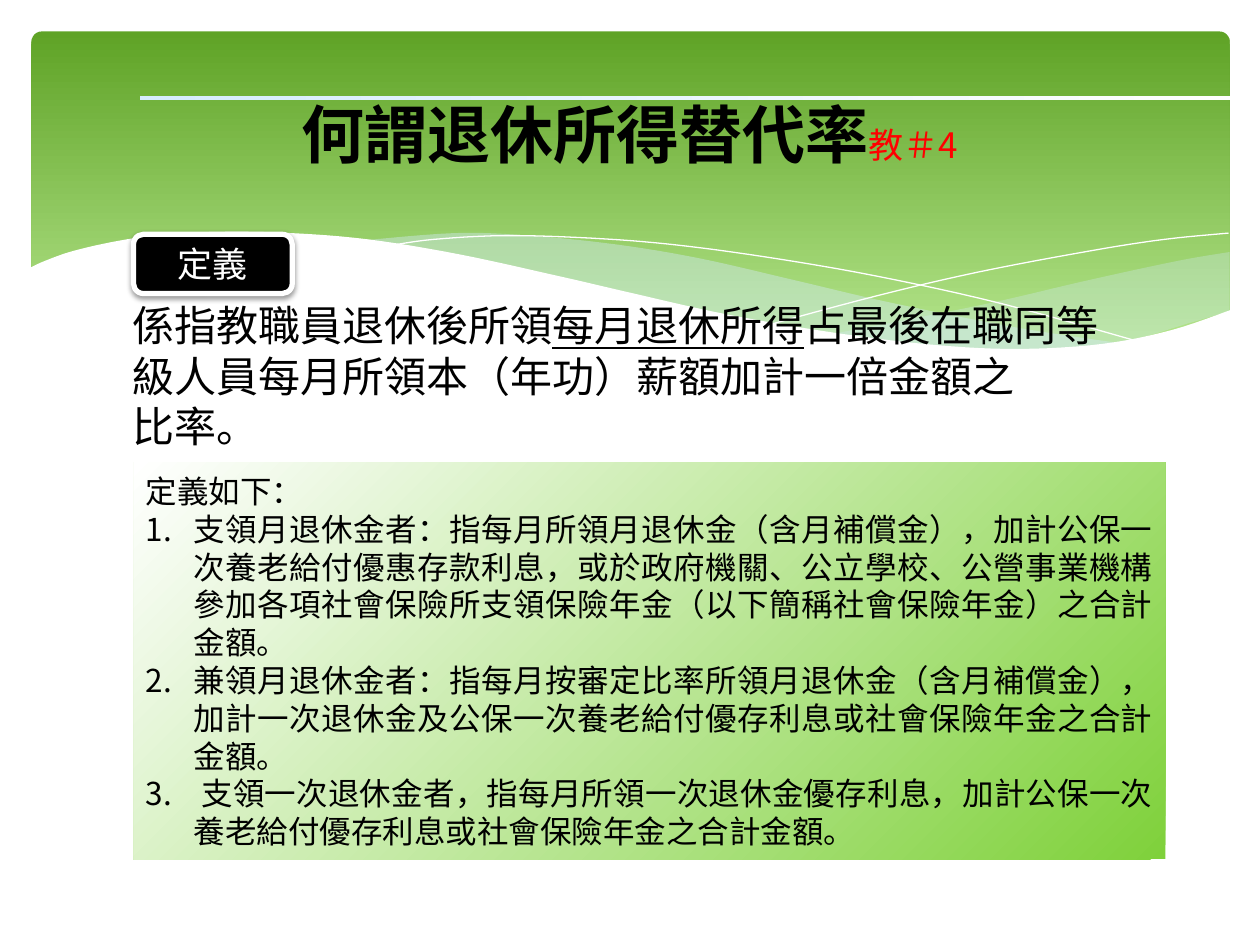
"""Builds the slide that defines the pension replacement rate."""
from lxml.etree import SubElement as Sub
from pptx import Presentation
from pptx.dml.color import RGBColor as Rgb
from pptx.enum.shapes import MSO_SHAPE as Kind
from pptx.enum.text import MSO_ANCHOR as Anchor, PP_ALIGN as Align
from pptx.oxml.ns import qn
from pptx.util import Inches, Pt

HUES = {"leaf": "5FA326", "lime": "B2E389", "grass": "7FD13B", "sky": "D6ECFF",
        "white": "FFFFFF", "black": "000000", "red": "FF0000"}
FONT, CJK = "Cabin", "Noto Sans CJK SC"

deck = Presentation()
deck.slide_width, deck.slide_height = Inches(10), Inches(7.5)
unit = deck.slide_width / 100
slide = deck.slides.add_slide(deck.slide_layouts[1])
shapes = slide.shapes
title, body = slide.placeholders


def bend(keys, steps=6):
    pts = [keys[0]]
    for i in range(len(keys) - 1):
        a, b, c, d = keys[max(i - 1, 0)], keys[i], keys[i + 1], keys[min(i + 2, len(keys) - 1)]
        for t in (n / steps for n in range(1, steps + 1)):
            pts.append(tuple(
                (2 * q + (r - p) * t + (2 * p - 5 * q + 4 * r - s) * t ** 2
                 + (3 * q - p - 3 * r + s) * t ** 3) / 2
                for p, q, r, s in zip(a, b, c, d)))
    return [(x * unit, y * unit) for x, y in pts]


def write(par, parts, align):
    par.alignment = align
    for text, size, hue, face, bold, under in parts:
        run = par.add_run()
        run.text = text
        font = run.font
        font.size, font.name, font.bold, font.underline = Pt(size), face, bold, under
        font.color.rgb = Rgb.from_string(HUES[hue])


panels = {}
for name, kind, spot, tints, end, turn in [
    ("banner", Kind.ROUNDED_RECTANGLE, (2.5, 2.5, 95.1, 27), ("leaf", "lime"), 0.9, 270),
    ("rule", Kind.RECTANGLE, (11.1, 7.6, 87.7, 0.35), ("sky", "white"), 1, 0),
    ("badge", Kind.ROUNDED_RECTANGLE, (10.6, 18.6, 12.6, 4.7), ("black",), 1, 0),
    ("notes", Kind.LINE_CALLOUT_1_BORDER_AND_ACCENT_BAR, (10.6, 36.7, 81.9, 31.5),
     ("white", "grass"), 1, 0),
]:
    shape = shapes.add_shape(kind, *(int(v * unit) for v in spot))
    shape.shadow.inherit = False
    shape.line.fill.background()
    if len(tints) == 1:
        shape.fill.solid()
        shape.fill.fore_color.rgb = Rgb.from_string(HUES[tints[0]])
    else:
        shape.fill.gradient()
        shape.fill.gradient_angle = turn
        for stop, tint, place in zip(shape.fill.gradient_stops, tints, (0, end)):
            stop.color.rgb = Rgb.from_string(HUES[tint])
            stop.position = place
    panels[name] = shape
panels["banner"].adjustments[0] = 0.03

waves = [
    ("sky", 29, [
        [(97.6, 20), (93.5, 20.7), (86.1, 22.3), (77.9, 24.2), (66.1, 26.5)],
        [(66.1, 26.5), (71.9, 27.2), (78.1, 27.7), (84.4, 27.7), (89.7, 27), (94.2, 25.7),
         (97.6, 24.7)]]),
    ("sky", 40, [
        [(89.3, 27.3), (80.7, 26), (70.6, 24), (62.9, 22.2), (55.5, 20.5), (48.9, 19.4),
         (42, 18.7), (36.1, 18.5), (28.6, 19.1)],
        [(28.6, 19.1), (36.2, 20.3), (44.9, 22.2), (56.6, 24.8), (66.5, 26.6), (73.6, 27.5),
         (80.7, 27.8), (85.7, 27.7), (89.3, 27.3)]]),
    (None, 0, [
        [(30.9, 19.5), (34.4, 19), (40.1, 18.7), (46.9, 18.9), (53.3, 19.4), (60.8, 20.4),
         (69.5, 21.9), (79.5, 24.1), (90.7, 27.2)]]),
    (None, 0, [
        [(61.3, 25.7), (69.5, 23.5), (77.6, 21.6), (86.6, 19.9), (92.4, 19), (97.5, 18.5)]]),
    ("white", 100, [
        [(97.7, 24.6), (93, 26.2), (87.5, 27.3), (80.9, 27.7), (74.4, 27.4), (66.8, 26.5),
         (57.9, 25), (50.3, 23.3), (44.7, 22), (36.5, 20.2), (29.2, 19), (23, 18.5),
         (17.7, 18.4), (13.2, 18.6), (9.5, 19.1), (5.9, 19.9), (3.6, 20.7), (2.3, 21.3)],
        [(2.3, 32.9), (97.7, 32.9)]]),
]
for hue, alpha, curves in waves:
    pts = [pt for keys in curves for pt in bend(keys)]
    pen = shapes.build_freeform(*pts[0])
    pen.add_line_segments(pts[1:], close=hue is not None)
    wave = pen.convert_to_shape()
    wave.shadow.inherit = False
    if hue:
        wave.line.fill.background()
        wave.fill.solid()
        wave.fill.fore_color.rgb = Rgb.from_string(HUES[hue])
        tone = wave._element.spPr.find(".//" + qn("a:srgbClr"))
        Sub(tone, qn("a:alpha"), val=str(alpha * 1000))
    else:
        wave.fill.background()
        wave.line.color.rgb = Rgb.from_string(HUES["white"])
        wave.line.width = Pt(0)

for item in (panels["rule"], body, title, panels["badge"], panels["notes"]):
    shapes._spTree.append(item._element)

for item, spot in ((body, (9.5, 23.3, 81, 43.7)), (title, (5, 3.7, 90, 13.7))):
    item.left, item.top, item.width, item.height = (int(v * unit) for v in spot)

title.text_frame.vertical_anchor = Anchor.MIDDLE
write(title.text_frame.paragraphs[0], [
    ("何謂退休所得替代率", 36, "black", FONT, True, None),
    ("教＃4", 20, "red", CJK, False, None)], Align.CENTER)

par = body.text_frame.paragraphs[0]
par.space_before = Pt(0)
props = par._p.get_or_add_pPr()
props.set("marL", "0")
props.set("indent", "0")
Sub(props, qn("a:buNone"))
write(par, [
    ("係指教職員退休後所領", 24, "black", FONT, None, None),
    ("每月退休所得", 24, "black", FONT, None, True),
    ("占最後在職同等級人員每月所領本（年功）薪額加計一倍金額之", 24, "black", FONT, None, None),
], Align.LEFT)
par.add_line_break()
Sub(par._p.find(qn("a:br")), qn("a:rPr"), sz="2400")
write(par, [("比率。", 24, "black", FONT, None, None)], Align.LEFT)

badge = panels["badge"]
badge.line.color.rgb = Rgb.from_string(HUES["white"])
badge.line.width = Pt(3)
glow = Sub(badge._element.spPr.find(qn("a:effectLst")), qn("a:outerShdw"),
           blurRad=str(Pt(3.1)), dist=str(Pt(1.6)), dir="5400000", rotWithShape="0")
Sub(Sub(glow, qn("a:srgbClr"), val=HUES["black"]), qn("a:alpha"), val="38000")
badge.text_frame.vertical_anchor = Anchor.MIDDLE
write(badge.text_frame.paragraphs[0], [("定義", 20, "white", FONT, None, None)], Align.CENTER)

notes = panels["notes"]
for i, value in enumerate((0.41, 1.01, -0.29, 0.53)):
    notes.adjustments[i] = value
grad = notes._element.spPr.find(qn("a:gradFill"))
grad.remove(grad.find(qn("a:lin")))
Sub(Sub(grad, qn("a:path"), path="circle"), qn("a:fillToRect"), r="100000", b="100000")

frame = notes.text_frame
frame.word_wrap = True
frame.vertical_anchor = Anchor.MIDDLE
for i, text in enumerate([
    "定義如下：",
    "支領月退休金者：指每月所領月退休金（含月補償金），加計公保一次養老給付優惠存款利息，"
    "或於政府機關、公立學校、公營事業機構參加各項社會保險所支領保險年金"
    "（以下簡稱社會保險年金）之合計金額。",
    "兼領月退休金者：指每月按審定比率所領月退休金（含月補償金），"
    "加計一次退休金及公保一次養老給付優存利息或社會保險年金之合計金額。",
    " 支領一次退休金者，指每月所領一次退休金優存利息，"
    "加計公保一次養老給付優存利息或社會保險年金之合計金額。",
]):
    par = frame.add_paragraph() if i else frame.paragraphs[0]
    if i:
        props = par._p.get_or_add_pPr()
        props.set("marL", str(Inches(0.38)))
        props.set("indent", str(-Inches(0.38)))
        Sub(props, qn("a:buFont"), typeface="+mj-lt")
        Sub(props, qn("a:buAutoNum"), type="arabicPeriod")
    write(par, [(text, 18, "black", FONT, None, None)], Align.JUSTIFY)

deck.save("out.pptx")
